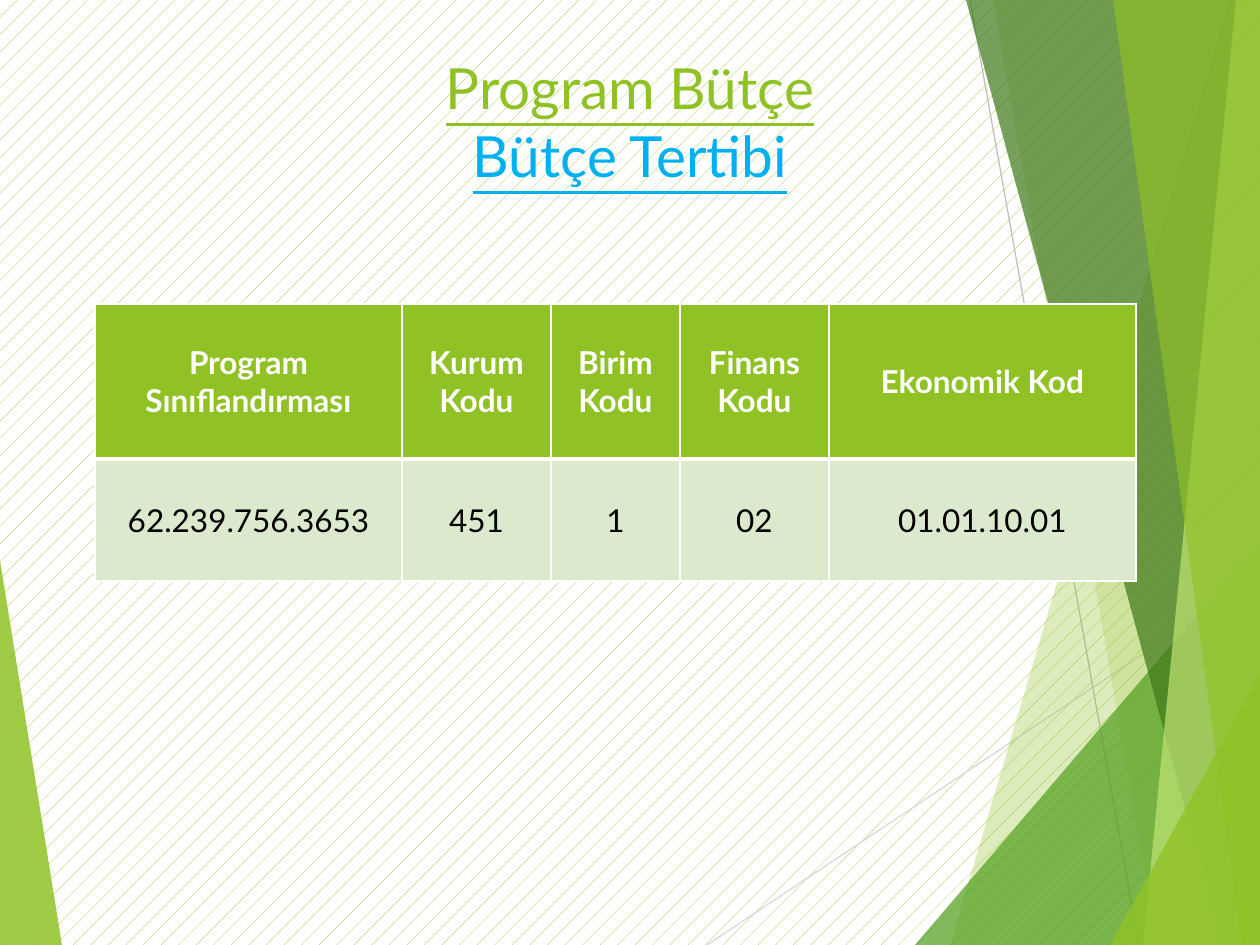
import dataclasses
import lxml.etree
import pptx
import pptx.dml.color
import pptx.enum.dml
import pptx.enum.shapes
import pptx.enum.text
import pptx.oxml
import pptx.oxml.ns
import pptx.util

SCALE = 914400 / 126
qn = pptx.oxml.ns.qn


@dataclasses.dataclass(frozen=True)
class Theme:
    font: str = "Lato"
    head: float = 32.4
    body: float = 18
    lime: str = "90C226"
    leaf: str = "54A021"
    moss: str = "3F7819"
    pale: str = "C0E474"
    blue: str = "00B0F0"
    mint: str = "DBE9CD"
    white: str = "FFFFFF"
    black: str = "000000"
    light: str = "D9D9D9"
    gray: str = "BFBFBF"


THEME = Theme()


def px(size):
    return pptx.util.Emu(round(size * SCALE))


def rgb(tone):
    return pptx.dml.color.RGBColor.from_string(tone)


def place(shape, box):
    shape.left, shape.top, shape.width, shape.height = map(px, box)


def facet(slide, points, tone, alpha):
    pen = slide.shapes.build_freeform(*points[0], scale=SCALE)
    pen.add_line_segments(points[1:], close=True)
    shape = pen.convert_to_shape()
    shape.shadow.inherit = False
    shape.fill.solid()
    shape.fill.fore_color.rgb = rgb(tone)
    shape.line.fill.background()
    color = shape.fill._xPr.find(qn("a:solidFill"))[0]
    lxml.etree.SubElement(color, qn("a:alpha"), val=str(alpha * 1000))


def streak(slide, start, end, tone):
    kind = pptx.enum.shapes.MSO_CONNECTOR.STRAIGHT
    line = slide.shapes.add_connector(kind, *map(px, start + end))
    line.line.color.rgb = rgb(tone)
    line.line.width = pptx.util.Pt(0.75)
    lxml.etree.SubElement(line._element.spPr, qn("a:effectLst"))


def decor(slide, box):
    left, top, wide, high = box
    right, base = left + wide, top + high

    def band(upper, lower, tone, alpha):
        points = [(left + upper, top), (left + lower, base), (right, base), (right, top)]
        facet(slide, points, tone, alpha)

    def wedge(foot, peak, tone, alpha):
        facet(slide, [(left + foot, base), (right, top + peak), (right, base)], tone, alpha)

    facet(slide, [(left, top + 560), (left + 62, base), (left, base)], THEME.lime, 85)
    streak(slide, (left + 707, base), (right, top + 576), THEME.light)
    streak(slide, (left + 970, top), (left + 1139, base), THEME.gray)
    band(1229, 950, THEME.lime, 30)
    band(993, 1158, THEME.lime, 20)
    wedge(915, 541, THEME.leaf, 72)
    band(966, 1222, THEME.moss, 70)
    band(1236, 1143, THEME.pale, 70)
    band(1113, 1242, THEME.lime, 65)
    wedge(1110, 674, THEME.lime, 80)


def heading(slide, box):
    title = slide.shapes.title
    slide.shapes._spTree.append(title._element)
    place(title, box)
    frame = title.text_frame
    frame.auto_size = pptx.enum.text.MSO_AUTO_SIZE.NONE
    frame.vertical_anchor = pptx.enum.text.MSO_ANCHOR.TOP
    frame.margin_top = px(15)
    para = frame.paragraphs[0]
    para.alignment = pptx.enum.text.PP_ALIGN.CENTER
    para.font.size = pptx.util.Pt(THEME.head)
    para.font.name = THEME.font
    para.font.underline = True
    for text, tone in (("Program Bütçe", THEME.lime), ("Bütçe Tertibi", THEME.blue)):
        if para.runs:
            para.add_line_break()
        run = para.add_run()
        run.text = text
        run.font.size = pptx.util.Pt(THEME.head)
        run.font.color.rgb = rgb(tone)


def border(cell, widths):
    props = cell._tc.get_or_add_tcPr()
    for side, width in zip("LRTB", widths):
        line = lxml.etree.SubElement(props, qn(f"a:ln{side}"), w=str(pptx.util.Pt(width)))
        fill = lxml.etree.SubElement(line, qn("a:solidFill"))
        lxml.etree.SubElement(fill, qn("a:srgbClr"), val=THEME.white)


def codes(slide, box):
    rows = [
        ("Program Sınıflandırması", "Kurum Kodu", "Birim Kodu", "Finans Kodu", "Ekonomik Kod"),
        ("62.239.756.3653", "451", "1", "02", "01.01.10.01"),
    ]
    looks = [
        (THEME.lime, THEME.white, True, (1, 1, 1, 3)),
        (THEME.mint, THEME.black, False, (1, 1, 3, 1)),
    ]
    table = slide.shapes.add_table(len(rows), len(rows[0]), *map(px, box)).table
    table.horz_banding = False
    for col, width in zip(table.columns, (307, 149, 129, 149, 307)):
        col.width = px(width)
    for row, high, texts, look in zip(table.rows, (155, 122), rows, looks):
        row.height = px(high)
        fill, ink, bold, widths = look
        for cell, text in zip(row.cells, texts):
            border(cell, widths)
            cell.fill.solid()
            cell.fill.fore_color.rgb = rgb(fill)
            cell.vertical_anchor = pptx.enum.text.MSO_ANCHOR.MIDDLE
            cell.text = text
            para = cell.text_frame.paragraphs[0]
            para.alignment = pptx.enum.text.PP_ALIGN.CENTER
            para.font.name = THEME.font
            para.font.size = pptx.util.Pt(THEME.body)
            para.font.bold = bold
            para.font.color.rgb = rgb(ink)


def main():
    deck = pptx.Presentation()
    deck.slide_width, deck.slide_height = px(1260), px(945)
    slide = deck.slides.add_slide(deck.slide_layouts[5])
    back = slide.background.fill
    back.patterned()
    back.pattern = pptx.enum.dml.MSO_PATTERN.PERCENT_5
    back.fore_color.rgb = rgb(THEME.lime)
    back.back_color.rgb = rgb(THEME.white)
    decor(slide, (0, 0, 1260, 945))
    heading(slide, (63, 38, 1134, 236))
    codes(slide, (95, 304, 1041, 277))
    deck.save("out.pptx")


if __name__ == "__main__":
    main()
